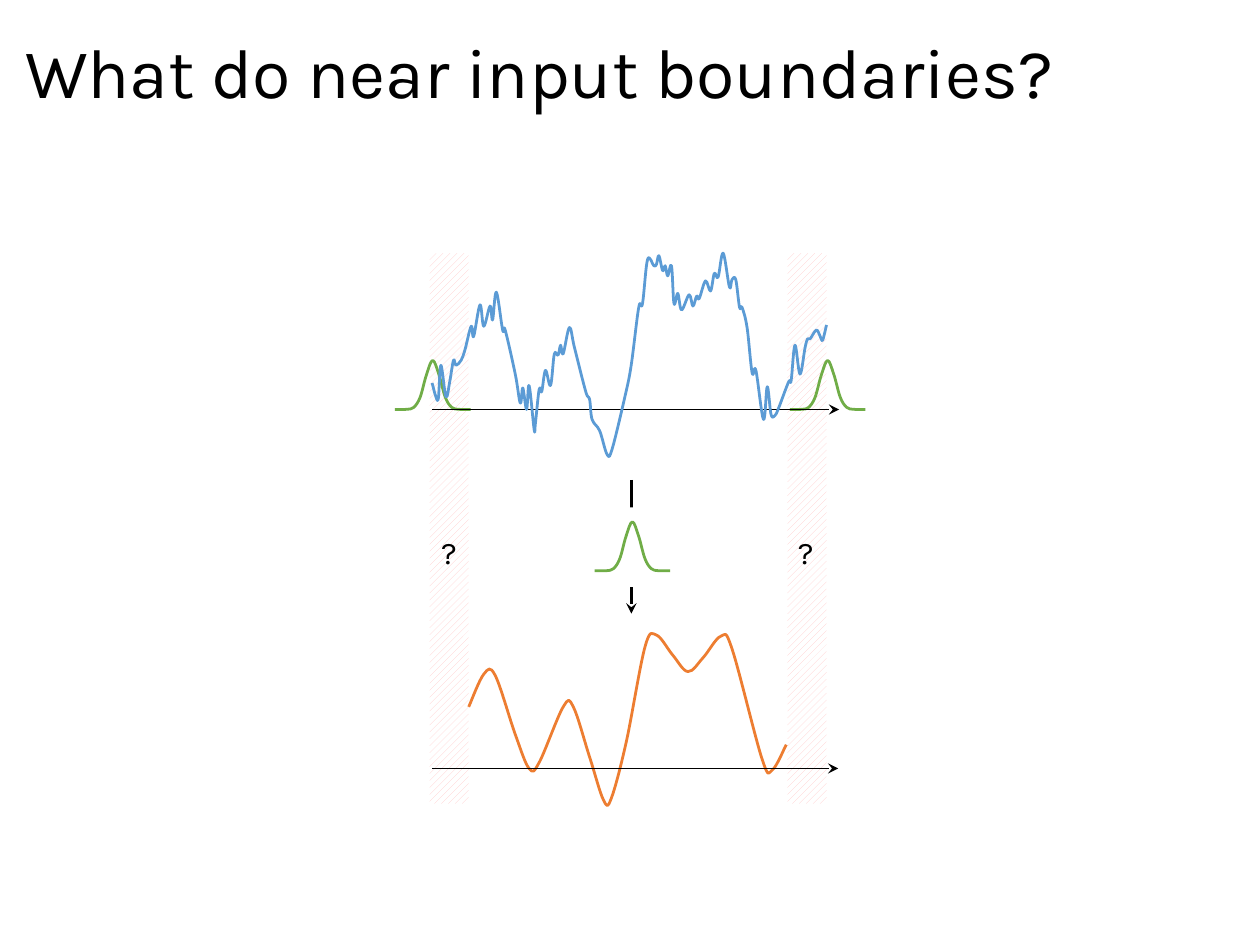
import math

from lxml import etree
from pptx import Presentation
from pptx.dml.color import RGBColor
from pptx.enum.dml import MSO_PATTERN
from pptx.enum.shapes import MSO_CONNECTOR, MSO_SHAPE
from pptx.enum.text import MSO_ANCHOR, MSO_AUTO_SIZE, PP_ALIGN
from pptx.oxml.ns import qn
from pptx.util import Pt

RECT, STRAIGHT = MSO_SHAPE.RECTANGLE, MSO_CONNECTOR.STRAIGHT
HATCH = MSO_PATTERN.WIDE_UPWARD_DIAGONAL
LEFT, CENTER, MIDDLE = PP_ALIGN.LEFT, PP_ALIGN.CENTER, MSO_ANCHOR.MIDDLE
COLORS = {name: RGBColor.from_string(h) for name, h in {
    "black": "000000", "white": "FFFFFF", "hatch": "FFCCCC",
    "kernel": "70AD47", "signal": "5B9BD5", "result": "ED7D31"}.items()}
FONT = "Karla"
UNIT = 0.72  # points per unit of the two data series below

SIGNAL = [
    (343, 304), (346, 315), (348, 316), (350, 290), (354, 315), (357, 303),
    (360, 286), (362, 290), (366, 286), (369, 278), (374, 259), (376, 267),
    (381, 242), (384, 259), (389, 243), (391, 254), (394, 232), (399, 262),
    (401, 262), (409, 297), (413, 320), (415, 308), (418, 325), (420, 306),
    (424, 341), (425, 336), (428, 309), (430, 311), (433, 294), (437, 306),
    (440, 281), (443, 282), (445, 274), (447, 281), (452, 260), (456, 276),
    (465, 311), (468, 317), (470, 333), (476, 342), (482, 361), (486, 356),
    (496, 315), (501, 290), (507, 244), (510, 241), (514, 206), (519, 211),
    (521, 210), (523, 203), (526, 215), (528, 211), (530, 219), (533, 211),
    (535, 241), (538, 233), (541, 246), (547, 234), (550, 243), (553, 235),
    (555, 237), (560, 223), (564, 231), (567, 217), (570, 220), (574, 201),
    (579, 228), (581, 222), (584, 222), (587, 244), (589, 244), (593, 260),
    (597, 296), (600, 294), (606, 333), (609, 307), (612, 329), (615, 330),
    (618, 324), (626, 303), (628, 302), (631, 274), (635, 297), (639, 276),
    (641, 269), (643, 269), (648, 262), (651, 267), (653, 270), (656, 258)]
RESULT = [
    (372, 561), (384, 535), (393, 536), (409, 583), (420, 610), (428, 605),
    (447, 561), (455, 561), (468, 601), (479, 635), (485, 634), (497, 589),
    (512, 513), (521, 504), (534, 520), (546, 533), (558, 522), (572, 505),
    (581, 515), (605, 603), (613, 611), (624, 591)]

prs = Presentation()
prs.slide_width, prs.slide_height = Pt(720), Pt(540)
s = prs.slides.add_slide(prs.slide_layouts[5])


def add_curve(points, color):
    """Draw an open curve through the points, with Catmull-Rom Bézier handles."""
    nodes = [(Pt(x), Pt(y)) for x, y in points]
    builder = s.shapes.build_freeform(*nodes[0])
    builder.add_line_segments(nodes[1:], close=False)
    sp = builder.convert_to_shape()
    sp.shadow.inherit = False
    sp.fill.background()
    sp.line.color.rgb = COLORS[color]
    sp.line.width = Pt(1.59)

    padded = [nodes[0], *nodes, nodes[-1]]
    spans = zip(padded, padded[1:], padded[2:], padded[3:])
    segments = list(sp._element.iter(qn("a:lnTo")))
    for segment, (a, b, c, d) in zip(segments, spans):
        segment.tag = qn("a:cubicBezTo")
        handles = [(q + (r - p) / 6, r - (u - q) / 6)
                   for p, q, r, u in zip(a, b, c, d)]
        for i, (x, y) in enumerate(zip(*handles)):
            pt = etree.Element(qn("a:pt"), x=str(round(x - sp.left)),
                               y=str(round(y - sp.top)))
            segment.insert(i, pt)


def add_arrow(x1, y1, x2, y2, width):
    cxn = s.shapes.add_connector(STRAIGHT, Pt(x1), Pt(y1), Pt(x2), Pt(y2))
    cxn.line.color.rgb = COLORS["black"]
    cxn.line.width = Pt(width)
    ln = cxn.line._get_or_add_ln()
    etree.SubElement(ln, qn("a:tailEnd"), type="stealth")
    etree.SubElement(cxn._element.spPr, qn("a:effectLst"))


# Title
title = s.shapes.title
title.left, title.top, title.width, title.height = Pt(7.2), Pt(7.2), Pt(705.6), Pt(72)
tf = title.text_frame
tf.text = "What do near input boundaries?"
tf.vertical_anchor = MIDDLE
p = tf.paragraphs[0]
p.alignment, p.line_spacing = LEFT, 0.9
texts = [(p, 40)]

# Boundary bands with their question marks
for band_x, mark_x in ((245.5, 242.6), (450, 446.4)):
    sp = s.shapes.add_shape(RECT, Pt(band_x), Pt(144.7), Pt(22.3), Pt(314.6))
    sp.shadow.inherit = False
    sp.fill.patterned()
    sp.fill.pattern = HATCH
    sp.fill.fore_color.rgb = COLORS["hatch"]
    sp.fill.back_color.rgb = COLORS["white"]
    sp.line.fill.background()

    tf = s.shapes.add_textbox(Pt(mark_x), Pt(301), Pt(28), Pt(34.6)).text_frame
    tf.word_wrap = False
    tf.auto_size = MSO_AUTO_SIZE.SHAPE_TO_FIT_TEXT
    p = tf.paragraphs[0]
    p.text, p.alignment = "?", CENTER
    texts.append((p, 18))

for p, size in texts:
    for name, value in {"name": FONT, "size": Pt(size)}.items():
        setattr(p.font, name, value)
    p.font.color.rgb = COLORS["black"]

# Gaussian kernel, centred on x = 0 with its base at y = 0
kernel = [(x, -28 * math.exp(-(x / 4.3) ** 2 / 2))
          for x in (3.6 * i for i in range(-6, 7))]
kernels = [[(cx + x, base + y) for x, y in kernel]
           for cx, base in ((247.3, 234), (473, 234), (361.4, 326.2))]

# Input signal with a kernel at each end, and the filtered result
for points in kernels[:2]:
    add_curve(points, "kernel")
add_arrow(247, 234, 479.5, 234, 0.75)
add_curve([(x * UNIT, y * UNIT) for x, y in SIGNAL], "signal")
add_arrow(360.8, 274.3, 360.8, 350.6, 1.5)
add_curve([(x * UNIT, y * UNIT) for x, y in RESULT], "result")
add_arrow(247, 439.1, 479, 439.1, 0.75)

# Kernel in the gap of the downward arrow
sp = s.shapes.add_shape(RECT, Pt(332), Pt(290), Pt(57.6), Pt(45.4))
sp.shadow.inherit = False
sp.fill.solid()
sp.fill.fore_color.rgb = COLORS["white"]
sp.line.fill.background()
add_curve(kernels[2], "kernel")

prs.save("out.pptx")
